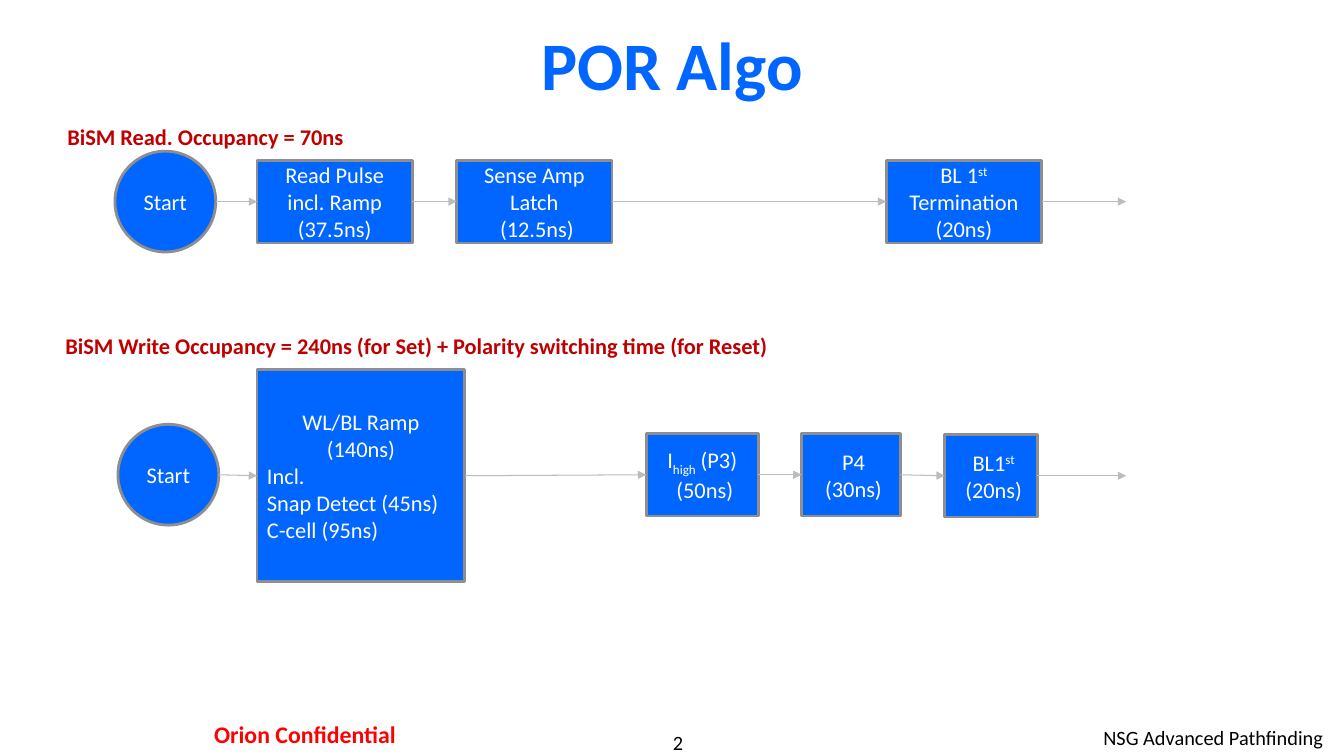
"""Build the POR Algo slide: read and write occupancy flows."""
import pptx
import pptx.dml.color
import pptx.enum.shapes
import pptx.enum.text
import pptx.oxml
import pptx.oxml.ns
import pptx.util

PX = 9144
LEFT, CENTER, RIGHT = (getattr(pptx.enum.text.PP_ALIGN, n) for n in ("LEFT", "CENTER", "RIGHT"))
TOP, MIDDLE = pptx.enum.text.MSO_ANCHOR.TOP, pptx.enum.text.MSO_ANCHOR.MIDDLE
SHAPE = pptx.enum.shapes.MSO_SHAPE
STRAIGHT = pptx.enum.shapes.MSO_CONNECTOR.STRAIGHT
RGB = pptx.dml.color.RGBColor.from_string
THEME = {
    "font": "Calibri",
    "blue": RGB("0066FF"), "white": RGB("FFFFFF"), "black": RGB("000000"),
    "heading": RGB("C00000"), "notice": RGB("FF0000"),
    "outline": RGB("8E8E8E"), "arrow": RGB("BCBCBC"),
    "title_size": 48.5, "notice_size": 17, "body_size": 16, "footer_size": 14.5,
    "outline_width": 2, "arrow_width": 0.75,
}


def write(sp, lines, color, size, bold=False, anchor=MIDDLE):
    """Fill a shape with lines of (alignment, [(text, baseline percent)])."""
    tf = sp.text_frame
    tf.vertical_anchor = anchor
    for i, (align, runs) in enumerate(lines):
        p = tf.add_paragraph() if i else tf.paragraphs[0]
        p.alignment = align
        for text, baseline in runs:
            r = p.add_run()
            r.text = text
            r.font.name = THEME["font"]
            r.font.size = pptx.util.Pt(THEME[size])
            r.font.bold = bold
            r.font.color.rgb = THEME[color]
            if baseline:
                r.font._element.set("baseline", str(baseline * 1000))


def add_node(shapes, kind, box, lines):
    """Add an outlined blue step with white text."""
    sp = shapes.add_shape(kind, *(PX * v for v in box))
    sp.shadow.inherit = False
    sp.fill.solid()
    sp.fill.fore_color.rgb = THEME["blue"]
    sp.line.color.rgb = THEME["outline"]
    sp.line.width = pptx.util.Pt(THEME["outline_width"])
    sp.text_frame.word_wrap = True
    write(sp, lines, "white", "body_size")
    return sp


prs = pptx.Presentation()
prs.slide_width, prs.slide_height = PX * 1333, PX * 750
s = prs.slides.add_slide(prs.slide_layouts[6])

labels = [
    ("2", (556, 724, 233, 24), (0, 0), CENTER, "black", "footer_size", False, TOP, True),
    ("NSG Advanced Pathfinding", (883, 715, 439, 35), (10, 5), RIGHT, "black", "footer_size", False, TOP, True),
    ("Orion Confidential", (155, 708, 295, 41), (12, 6), CENTER, "notice", "notice_size", True, TOP, True),
    ("POR Algo", (100, 17, 1133, 92), (10, 5), CENTER, "blue", "title_size", True, MIDDLE, True),
    ("BiSM Read. Occupancy = 70ns", (57, 117, 298, 37), (10, 5), LEFT, "heading", "body_size", True, TOP, False),
    ("BiSM Write Occupancy = 240ns (for Set) + Polarity switching time (for Reset)",
     (55, 325, 719, 37), (10, 5), LEFT, "heading", "body_size", True, TOP, False),
]
for text, box, (inset_x, inset_y), align, color, size, bold, anchor, wrap in labels:
    sp = s.shapes.add_textbox(*(PX * v for v in box))
    tf = sp.text_frame
    tf.word_wrap = wrap
    tf.margin_left = tf.margin_right = PX * inset_x
    tf.margin_top = tf.margin_bottom = PX * inset_y
    write(sp, [(align, [(text, 0)])], color, size, bold, anchor)

read_steps = [
    ((255, 159, 154, 82), [(CENTER, [("Read Pulse incl. Ramp", 0)]), (CENTER, [("(37.5ns)", 0)])]),
    ((453, 159, 154, 82), [(CENTER, [("Sense Amp Latch", 0)]), (CENTER, [(" (12.5ns)", 0)])]),
    ((879, 159, 154, 82), [(CENTER, [("BL 1", 0), ("st", 30), (" Termination (20ns)", 0)])]),
]
write_steps = [
    ((255, 367, 206, 210), [
        (CENTER, [("WL/BL Ramp", 0)]), (CENTER, [("(140ns)", 0)]), (LEFT, [("Incl.", 0)]),
        (LEFT, [("Snap Detect (45ns)", 0)]), (LEFT, [("C-cell (95ns)", 0)])]),
    ((641, 430, 111, 82), [(CENTER, [("I", 0), ("high", -25), (" (P3)", 0)]), (CENTER, [(" (50ns)", 0)])]),
    ((795, 430, 98, 82), [(CENTER, [(" P4", 0)]), (CENTER, [(" (30ns)", 0)])]),
    ((937, 431, 92, 82), [(CENTER, [(" BL1", 0), ("st", 30)]), (CENTER, [(" (20ns)", 0)])]),
]
flow_end = 1117

for start_box, steps in [((114, 150, 100, 100), read_steps), ((117, 421, 100, 100), write_steps)]:
    shapes = s.shapes.add_group_shape().shapes
    start = add_node(shapes, SHAPE.OVAL, start_box, [(CENTER, [("Start", 0)])])
    nodes = [add_node(shapes, SHAPE.RECTANGLE, box, lines) for box, lines in steps]
    for source, target in zip([start] + nodes, nodes + [None]):
        y = source.top + source.height // 2
        end_x = target.left if target else PX * flow_end
        cxn = shapes.add_connector(STRAIGHT, source.left + source.width, y, end_x, y)
        if source is not start:
            cxn.begin_connect(source, 3)
        if target:
            cxn.end_connect(target, 1)
        cxn.line.color.rgb = THEME["arrow"]
        cxn.line.width = pptx.util.Pt(THEME["arrow_width"])
        ln = cxn.line._get_or_add_ln()
        ln.append(pptx.oxml.parse_xml(f'<a:tailEnd {pptx.oxml.ns.nsdecls("a")} type="triangle"/>'))
        cxn._element.spPr.append(pptx.oxml.parse_xml(f'<a:effectLst {pptx.oxml.ns.nsdecls("a")}/>'))

prs.save("out.pptx")
